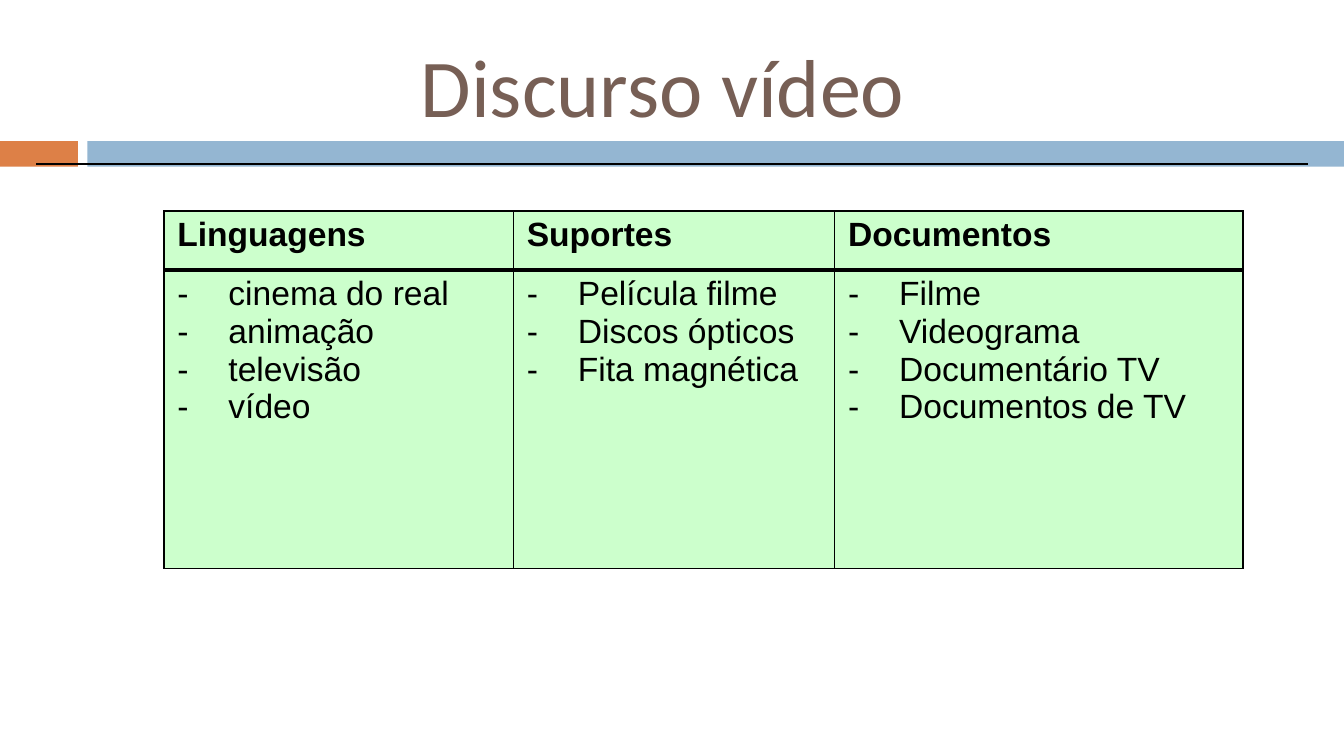
from dataclasses import dataclass

from lxml import etree
from pptx import Presentation
from pptx.dml.color import RGBColor
from pptx.enum.shapes import MSO_CONNECTOR, MSO_SHAPE
from pptx.enum.text import MSO_ANCHOR, PP_ALIGN
from pptx.oxml.ns import qn
from pptx.util import Inches, Pt

LEFT, JUST = PP_ALIGN.LEFT, PP_ALIGN.JUSTIFY
MIDDLE, TOP = MSO_ANCHOR.MIDDLE, MSO_ANCHOR.TOP
RECT, STRAIGHT = MSO_SHAPE.RECTANGLE, MSO_CONNECTOR.STRAIGHT


@dataclass(frozen=True)
class Theme:
    title: str = "775F55"
    accent: str = "DD8047"
    band: str = "94B6D2"
    cell: str = "CCFFCC"
    ink: str = "000000"
    head_font: str = "Calibri"
    body_font: str = "Arial"
    head_size: int = 44
    body_size: int = 18
    rule: float = 0.75
    thin: int = 1
    thick: int = 2


THEME = Theme()

# Heading, heading alignment, items, item alignment, column width
COLUMNS = [
    ("Linguagens", LEFT,
     ["cinema do real", "animação", "televisão", "vídeo"], JUST, 2.6),
    ("Suportes", JUST,
     ["Película filme", "Discos ópticos", "Fita magnética"], JUST, 2.39),
    ("Documentos", LEFT,
     ["Filme", "Videograma", "Documentário TV", "Documentos de TV"], LEFT, 3.04),
]
ROWS = [0.44, 2.22]


def write(frame, lines, font=THEME.body_font, size=THEME.body_size,
          color=THEME.ink, bold=False, align=LEFT, hang=0, bullet=None):
    """Fill a text frame with one paragraph per line."""
    for i, line in enumerate(lines):
        para = frame.paragraphs[0] if i == 0 else frame.add_paragraph()
        para.alignment = align
        run = para.add_run()
        run.text = line
        run.font.name = font
        run.font.size = Pt(size)
        run.font.bold = bold
        run.font.color.rgb = RGBColor.from_string(color)
        props = para._p.get_or_add_pPr()
        if hang:
            props.set("marL", str(Inches(hang)))
            props.set("indent", str(-Inches(hang)))
        if bullet:
            etree.SubElement(props, qn("a:buFont"), typeface=font)
            etree.SubElement(props, qn("a:buChar"), char=bullet)


def add_title(slide, x, y, w, h):
    title = slide.shapes.title
    title.left, title.top = Inches(x), Inches(y)
    title.width, title.height = Inches(w), Inches(h)
    frame = title.text_frame
    frame.word_wrap = True
    frame.vertical_anchor = MIDDLE
    write(frame, ["Discurso vídeo"], font=THEME.head_font,
          size=THEME.head_size, color=THEME.title)


def add_bar(slide, x, y, w, h):
    """Draw the two-part band under the title."""
    block, gap = 0.58, 0.07
    start = block + gap
    for left, width, color in ((x, block, THEME.accent),
                               (x + start, w - start, THEME.band)):
        bar = slide.shapes.add_shape(
            RECT, Inches(left), Inches(y), Inches(width), Inches(h))
        bar.shadow.inherit = False
        bar.fill.solid()
        bar.fill.fore_color.rgb = RGBColor.from_string(color)
        bar.line.fill.background()


def add_rule(slide, x, y, w):
    rule = slide.shapes.add_connector(
        STRAIGHT, Inches(x), Inches(y), Inches(x + w), Inches(y))
    rule.line.color.rgb = RGBColor.from_string(THEME.ink)
    rule.line.width = Pt(THEME.rule)
    etree.SubElement(rule._element.spPr, qn("a:effectLst"))


def set_edges(cell, **widths):
    """Set cell borders; widths are given in the order L, R, T, B."""
    props = cell._tc.get_or_add_tcPr()
    for i, (side, width) in enumerate(widths.items()):
        edge = etree.Element(qn(f"a:ln{side}"), w=str(Pt(width)))
        fill = etree.SubElement(edge, qn("a:solidFill"))
        etree.SubElement(fill, qn("a:srgbClr"), val=THEME.ink)
        props.insert(i, edge)


def style_cell(cell, top, bottom):
    cell.fill.solid()
    cell.fill.fore_color.rgb = RGBColor.from_string(THEME.cell)
    cell.margin_left = cell.margin_right = Inches(0.1)
    cell.margin_top = cell.margin_bottom = Inches(0.04)
    cell.vertical_anchor = TOP
    set_edges(cell, L=THEME.thin, R=THEME.thin, T=top, B=bottom)


def add_grid(slide, x, y):
    widths = [col[-1] for col in COLUMNS]
    table = slide.shapes.add_table(
        len(ROWS), len(COLUMNS), Inches(x), Inches(y),
        Inches(sum(widths)), Inches(sum(ROWS))).table
    table.first_row = table.horz_banding = False
    for row, height in zip(table.rows, ROWS):
        row.height = Inches(height)
    for i, (head, head_al, items, item_al, width) in enumerate(COLUMNS):
        table.columns[i].width = Inches(width)
        top, body = table.cell(0, i), table.cell(1, i)
        style_cell(top, THEME.thin, THEME.thick)
        style_cell(body, THEME.thick, THEME.thin)
        write(top.text_frame, [head], bold=True, align=head_al, hang=0.38)
        write(body.text_frame, items, align=item_al, hang=0.38, bullet="-")


def main():
    deck = Presentation()
    deck.slide_width = Inches(10)
    deck.slide_height = deck.slide_width * 9 // 16
    slide = deck.slides.add_slide(deck.slide_layouts[5])
    add_bar(slide, 0, 1.05, 10, 0.19)
    add_title(slide, 3.03, 0.1, 5.72, 1.06)
    add_grid(slide, 1.22, 1.57)
    add_rule(slide, 0.27, 1.22, 9.46)
    deck.save("out.pptx")


if __name__ == "__main__":
    main()
